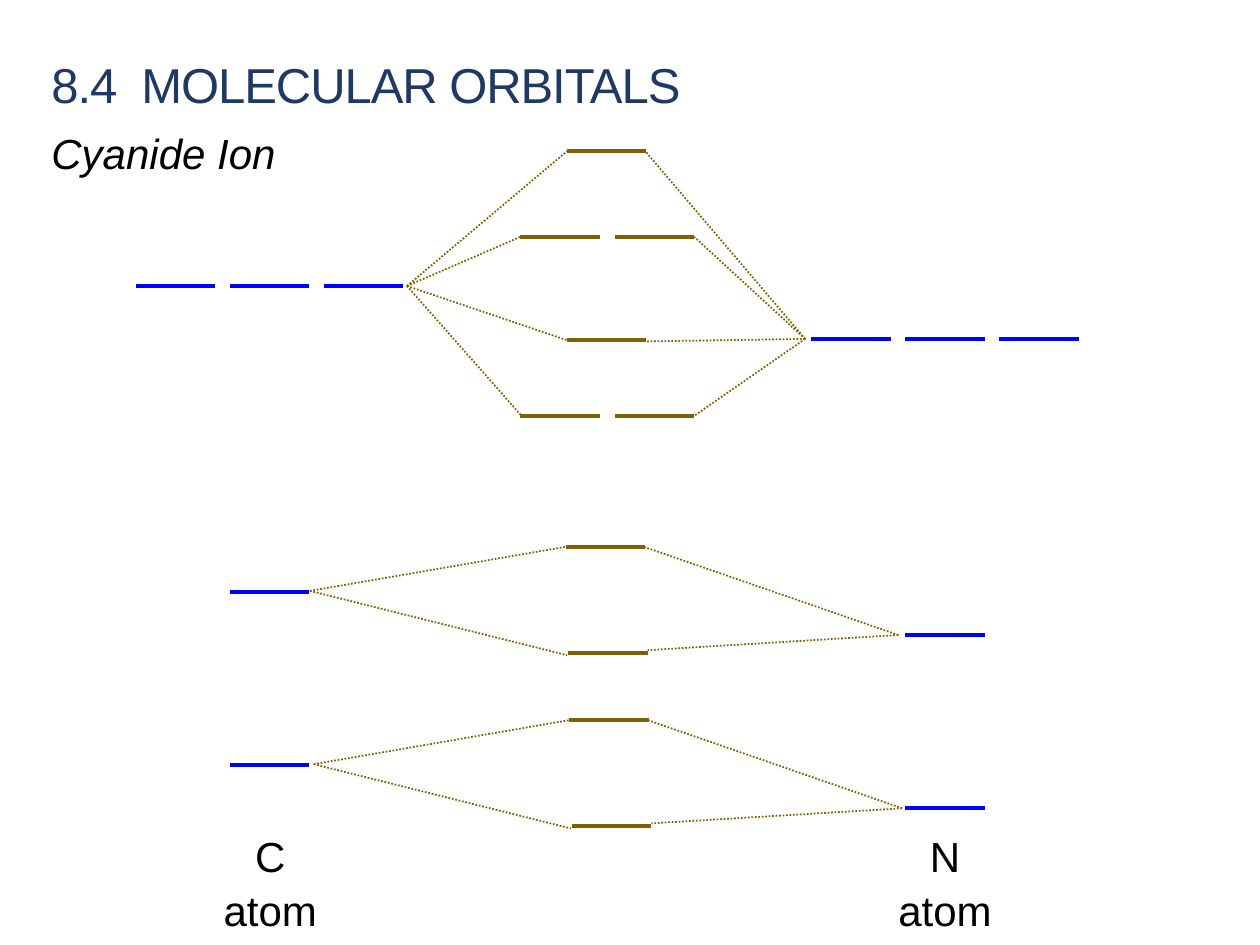
import pptx
import pptx.util
import pptx.dml.color
import pptx.enum.dml
import pptx.enum.shapes
import pptx.enum.text
import pptx.oxml.ns
from lxml import etree

Inches = pptx.util.Inches
Pt = pptx.util.Pt
RGBColor = pptx.dml.color.RGBColor
ANCHOR = pptx.enum.text.MSO_ANCHOR

NAVY = RGBColor(0x20, 0x38, 0x64)
BLACK = RGBColor(0, 0, 0)
BLUE = RGBColor(0, 0, 0xFF)
BROWN = RGBColor(0x80, 0x60, 0)

# Text: wording, box, look
TEXTS = [
    dict(text="8.4  MOLECULAR ORBITALS", box=(0.31, 0.38, 9.33, 0.57), size=28,
         color=NAVY, spacing=-60, anchor=ANCHOR.BOTTOM),
    dict(text="Cyanide Ion", box=(0.31, 0.94, 2, 0.5), italic=True, line_spacing=1.06),
]
ATOM_LABELS = [("C atom", 1.67, 0.95), ("N atom", 7.01, 0.98)]
ATOM_LABEL_TOP, ATOM_LABEL_HEIGHT = 6.52, 0.41

# Energy levels: left end and height
LEVEL_WIDTH = 0.63
ORBITAL_STEP = 0.745
CARBON_LEFT, NITROGEN_LEFT = 1.08, 6.44
CARBON_P, NITROGEN_P = 2.27, 2.69
P_MOLECULAR = [(4.5, 1.2), (4.13, 1.88), (4.88, 1.88), (4.5, 2.7), (4.13, 3.3), (4.88, 3.3)]

# Dotted links of the p levels: hub point, then the level ends it reaches
P_LINKS = [
    ((3.23, 2.27), [(4.5, 1.2), (4.13, 1.88), (4.5, 2.7), (4.13, 3.29)]),
    ((6.39, 2.69), [(5.13, 1.21), (5.51, 1.88), (5.13, 2.71), (5.51, 3.3)]),
]

# The two s sets share one pattern: drop of the levels, sideways shift of the middle
S_SETS = [(0, 0), (1.375, 0.03)]
S_ATOMIC = [(CARBON_LEFT + ORBITAL_STEP, 4.7), (NITROGEN_LEFT + ORBITAL_STEP, 5.04)]
S_MOLECULAR = [(4.49, 4.34), (4.51, 5.18)]
S_LINKS = [
    ((2.46, 4.69), [(4.49, 4.34), (4.5, 5.2)]),
    ((7.13, 5.04), [(5.11, 4.34), (5.14, 5.16)]),
]


def add_line(slide, start, end, color, width, dotted=False):
    line = slide.shapes.add_connector(
        pptx.enum.shapes.MSO_CONNECTOR.STRAIGHT,
        *(Inches(value) for value in (*start, *end)))
    line.line.color.rgb = color
    line.line.width = Pt(width)
    if dotted:
        line.line.dash_style = pptx.enum.dml.MSO_LINE.ROUND_DOT
    etree.SubElement(line._element.spPr, pptx.oxml.ns.qn("a:effectLst"))


def add_level(slide, left, height, color):
    add_line(slide, (left, height), (left + LEVEL_WIDTH, height), color, 2.25)


def add_links(slide, links, right=0, down=0):
    for (hub_x, hub_y), ends in links:
        for x, y in ends:
            add_line(slide, (hub_x + right, hub_y + down), (x + right, y + down),
                     BROWN, 1, dotted=True)


def add_text(slide, text, box, size=24, color=BLACK, italic=False, spacing=None,
             anchor=ANCHOR.TOP, align=None, line_spacing=None):
    frame = slide.shapes.add_textbox(*(Inches(value) for value in box)).text_frame
    frame.word_wrap = True
    frame.vertical_anchor = anchor
    paragraph = frame.paragraphs[0]
    paragraph.alignment = align
    paragraph.line_spacing = line_spacing
    run = paragraph.add_run()
    run.text = text
    run.font.name = "Arial"
    run.font.size = Pt(size)
    run.font.italic = italic
    run.font.color.rgb = color
    if spacing is not None:
        run._r.get_or_add_rPr().set("spc", str(spacing))


def main():
    presentation = pptx.Presentation()
    presentation.slide_width = Inches(10)
    presentation.slide_height = Inches(7.5)
    slide = presentation.slides.add_slide(presentation.slide_layouts[6])

    # Title and subtitle
    for text in TEXTS:
        add_text(slide, **text)

    # Three p orbitals on each atom, and their molecular orbitals
    for left, height in ((CARBON_LEFT, CARBON_P), (NITROGEN_LEFT, NITROGEN_P)):
        for index in range(3):
            add_level(slide, left + index * ORBITAL_STEP, height, BLUE)
    for left, height in P_MOLECULAR:
        add_level(slide, left, height, BROWN)
    add_links(slide, P_LINKS)

    # The s orbitals
    for down, right in S_SETS:
        for left, height in S_ATOMIC:
            add_level(slide, left, height + down, BLUE)
        for left, height in S_MOLECULAR:
            add_level(slide, left + right, height + down, BROWN)
        add_links(slide, S_LINKS, right, down)

    # Atom labels
    for text, left, width in ATOM_LABELS:
        add_text(slide, text, (left, ATOM_LABEL_TOP, width, ATOM_LABEL_HEIGHT),
                 align=pptx.enum.text.PP_ALIGN.CENTER, line_spacing=1.06)

    presentation.save("out.pptx")


if __name__ == "__main__":
    main()
